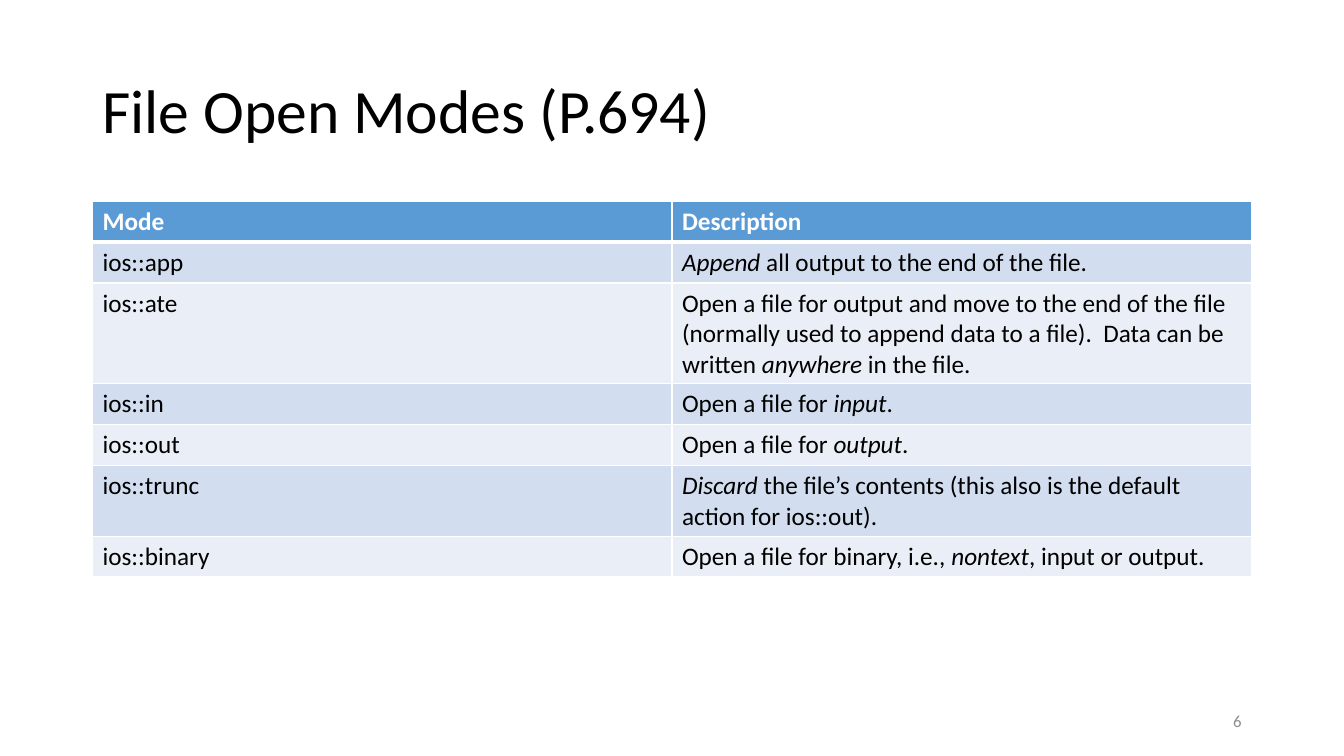
"""Build a slide with a table of C++ file open modes."""
from lxml.etree import SubElement
from pptx import Presentation
from pptx.dml.color import RGBColor
from pptx.enum.text import MSO_ANCHOR as Anchor, PP_ALIGN as Align
from pptx.oxml.ns import qn
from pptx.util import Cm, Pt

COLORS = {
    "text": "000000",
    "white": "FFFFFF",
    "header": "5B9BD5",
    "odd": "D2DEEF",
    "even": "EAEFF7",
    "number": "8C8C8C",
}
MODES = [
    ("Mode", "Description"),
    ("ios::app", "*Append* all output to the end of the file."),
    ("ios::ate", "Open a file for output and move to the end of the file "
     "(normally used to append data to a file).  Data can be written *anywhere* in the file."),
    ("ios::in", "Open a file for *input*."),
    ("ios::out", "Open a file for *output*."),
    ("ios::trunc", "*Discard* the file’s contents (this also is the default action for ios::out)."),
    ("ios::binary", "Open a file for binary, i.e., *nontext*, input or output."),
]


def add_runs(paragraph, text, size, color, bold=False):
    """Add text as runs, with the parts between asterisks in italics."""
    for index, part in enumerate(text.split("*")):
        if part:
            run = paragraph.add_run()
            run.text = part
            run.font.name = "Calibri"
            run.font.size = Pt(size)
            run.font.bold = bold
            run.font.italic = index % 2 == 1
            run.font.color.rgb = RGBColor.from_string(COLORS[color])


def add_border(cell, side, width):
    """Draw a solid white line on one side of a cell."""
    line = SubElement(cell._tc.get_or_add_tcPr(), qn(f"a:ln{side}"), w=str(Pt(width)))
    fill = SubElement(line, qn("a:solidFill"))
    SubElement(fill, qn("a:srgbClr"), val=COLORS["white"])


presentation = Presentation()
presentation.slide_width = Cm(33.87)
presentation.slide_height = Cm(19.05)
slide = presentation.slides.add_slide(presentation.slide_layouts[6])

labels = [
    ("File Open Modes (P.694)", 2.33, 1.01, 29.21, 3.68, 44, "text", Align.LEFT, 0.9),
    ("6", 23.92, 17.66, 7.62, 1.01, 12, "number", Align.RIGHT, 1.0),
]
for text, left, top, width, height, size, color, alignment, spacing in labels:
    box = slide.shapes.add_textbox(Cm(left), Cm(top), Cm(width), Cm(height))
    frame = box.text_frame
    frame.word_wrap = True
    frame.vertical_anchor = Anchor.MIDDLE
    paragraph = frame.paragraphs[0]
    paragraph.alignment = alignment
    paragraph.line_spacing = spacing
    add_runs(paragraph, text, size, color)

table = slide.shapes.add_table(
    len(MODES), 2, Cm(2.33), Cm(5.07), Cm(29.21), Cm(1.03 * len(MODES))
).table
for row, texts in enumerate(MODES):
    is_header = row == 0
    fill_color = "header" if is_header else "odd" if row % 2 else "even"
    for column, text in enumerate(texts):
        cell = table.cell(row, column)
        add_border(cell, "L", 1)
        add_border(cell, "R", 1)
        add_border(cell, "T", 3 if row == 1 else 1)
        add_border(cell, "B", 3 if is_header else 1)
        cell.fill.solid()
        cell.fill.fore_color.rgb = RGBColor.from_string(COLORS[fill_color])
        text_color = "white" if is_header else "text"
        add_runs(cell.text_frame.paragraphs[0], text, 18, text_color, is_header)

presentation.save("out.pptx")
